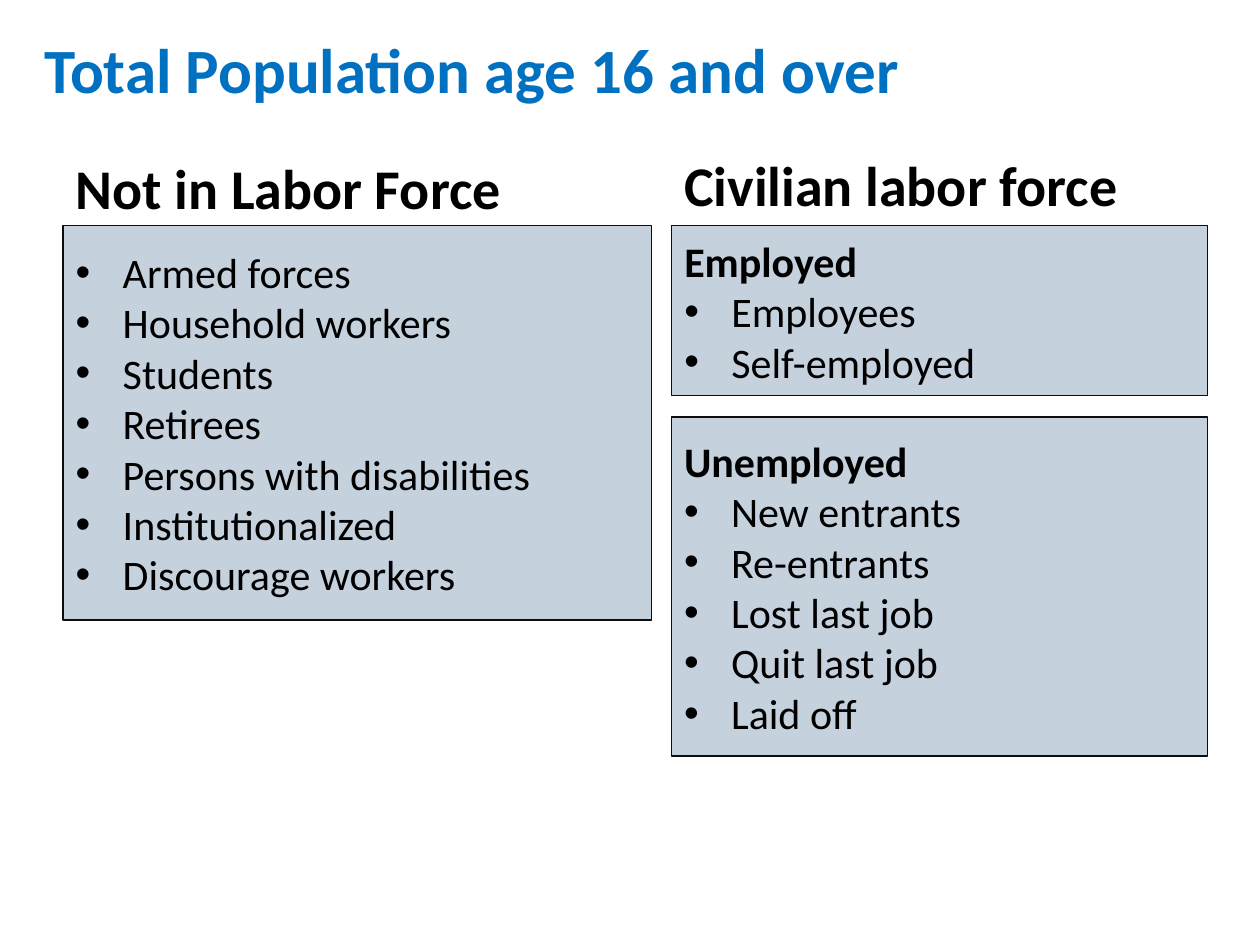
from dataclasses import dataclass

from lxml.etree import SubElement
from pptx import Presentation
from pptx.dml.color import RGBColor
from pptx.enum.shapes import MSO_SHAPE
from pptx.enum.text import MSO_ANCHOR, MSO_AUTO_SIZE, PP_ALIGN
from pptx.oxml.ns import qn
from pptx.util import Cm, Pt


@dataclass(frozen=True)
class Theme:
    font: str = "Calibri"
    title_color: RGBColor = RGBColor(0x00, 0x70, 0xC0)
    text_color: RGBColor = RGBColor(0x00, 0x00, 0x00)
    box_fill: RGBColor = RGBColor(0x1F, 0x49, 0x7D)
    box_line: RGBColor = RGBColor(0x0D, 0x0D, 0x0D)
    box_opacity: int = 25
    title_size: int = 36
    heading_size: int = 32
    body_size: int = 24


THEME = Theme()

# Column positions and shared rows, in centimetres
LEFT, LEFT_W = 1.27, 11.86
RIGHT, RIGHT_W = 13.54, 10.8
HEADING_TOP, HEADING_H = 2.97, 1.5
BOX_TOP = 4.55
BULLET_INDENT = Cm(0.95)


def place(sp, left, top, width, height):
    sp.left, sp.top, sp.width, sp.height = map(Cm, (left, top, width, height))


def set_frame(sp, anchor=MSO_ANCHOR.MIDDLE):
    tf = sp.text_frame
    tf.word_wrap = True
    tf.auto_size = MSO_AUTO_SIZE.NONE
    tf.vertical_anchor = anchor
    return tf


def format_paragraph(p, size, color=THEME.text_color, bold=False):
    p.alignment = PP_ALIGN.LEFT
    p.line_spacing = 1.0
    p.space_before = p.space_after = Pt(0)
    for r in p.runs:
        r.font.name = THEME.font
        r.font.size = Pt(size)
        r.font.bold = bold
        r.font.color.rgb = color


def set_bullet(p, bulleted):
    pPr = p._p.get_or_add_pPr()
    indent = BULLET_INDENT if bulleted else 0
    pPr.set("marL", str(indent))
    pPr.set("indent", str(-indent))
    if bulleted:
        SubElement(pPr, qn("a:buFont"), typeface="Arial")
        SubElement(pPr, qn("a:buChar"), char="•")
    else:
        SubElement(pPr, qn("a:buNone"))


def fill_heading(sp, text, box, size, color=THEME.text_color,
                 anchor=MSO_ANCHOR.MIDDLE):
    place(sp, *box)
    tf = set_frame(sp, anchor)
    tf.text = text
    format_paragraph(tf.paragraphs[0], size, color, bold=True)


def fill_list_box(sp, box, items, lead=None):
    """Tinted box with bulleted items under an optional bold lead line."""
    place(sp, *box)
    sp.shadow.inherit = False
    sp.fill.solid()
    sp.fill.fore_color.rgb = THEME.box_fill
    color = sp._element.spPr.find(qn("a:solidFill")).find(qn("a:srgbClr"))
    SubElement(color, qn("a:alpha"), val=str(THEME.box_opacity * 1000))
    sp.line.color.rgb = THEME.box_line
    sp.line.width = Pt(0.75)

    tf = set_frame(sp)
    lines = ([lead] if lead else []) + items
    tf.text = "\n".join(lines)
    for i, p in enumerate(tf.paragraphs):
        is_lead = bool(lead) and i == 0
        format_paragraph(p, THEME.body_size, bold=is_lead)
        set_bullet(p, not is_lead)


def main():
    prs = Presentation()
    prs.slide_width, prs.slide_height = Cm(25.4), Cm(19.05)
    s = prs.slides.add_slide(prs.slide_layouts.get_by_name("Comparison"))
    title, left_head, left_list, right_head, right_list = s.placeholders

    # Title
    fill_heading(title, "Total Population age 16 and over",
                 (0.64, 0.56, 20.96, 1.65), THEME.title_size, THEME.title_color)

    # Left column: outside the labor force
    fill_heading(left_head, "Not in Labor Force",
                 (LEFT, HEADING_TOP, LEFT_W, HEADING_H), THEME.heading_size,
                 anchor=MSO_ANCHOR.TOP)
    fill_list_box(left_list, (LEFT, BOX_TOP, LEFT_W, 7.95),
                  ["Armed forces", "Household workers", "Students", "Retirees",
                   "Persons with disabilities", "Institutionalized",
                   "Discourage workers"])

    # Right column: employed and unemployed
    fill_heading(right_head, "Civilian labor force",
                 (RIGHT, HEADING_TOP, RIGHT_W, HEADING_H), THEME.heading_size)
    fill_list_box(right_list, (RIGHT, BOX_TOP, RIGHT_W, 3.43),
                  ["Employees", "Self-employed"], lead="Employed")
    unemployed = s.shapes.add_shape(MSO_SHAPE.RECTANGLE, 0, 0, 0, 0)
    fill_list_box(unemployed, (RIGHT, 8.41, RIGHT_W, 6.83),
                  ["New entrants", "Re-entrants", "Lost last job",
                   "Quit last job", "Laid off"], lead="Unemployed")

    prs.save("out.pptx")


if __name__ == "__main__":
    main()
